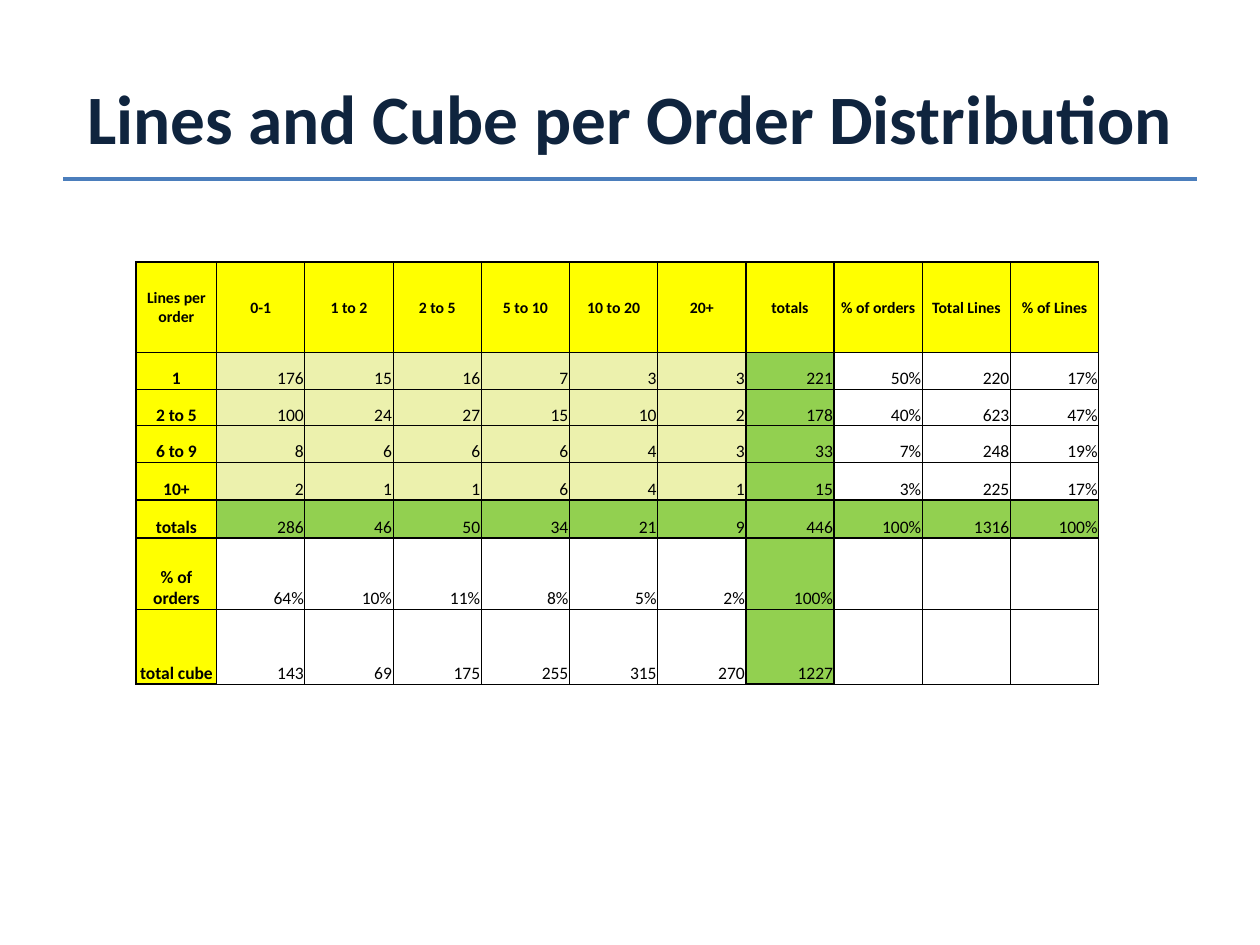
from dataclasses import dataclass

from lxml.etree import SubElement
from pptx import Presentation
from pptx.dml.color import RGBColor as Rgb
from pptx.enum.shapes import MSO_CONNECTOR as Connector
from pptx.enum.text import MSO_ANCHOR as Anchor, MSO_AUTO_SIZE as AutoSize, PP_ALIGN as Align
from pptx.oxml.ns import qn
from pptx.util import Inches, Pt


@dataclass(frozen=True)
class Theme:
    font: str = "Calibri"
    title: str = "0F243E"
    rule: str = "4B7EBC"
    text: str = "000000"
    label: str = "FFFF00"
    counts: str = "ECF1AD"
    totals: str = "92D050"
    title_size: float = 39.6
    header_size: float = 9
    body_size: float = 10
    thin: float = 0.5
    thick: float = 1


theme = Theme()


def write(frame, text, size, color, bold, alignment):
    paragraph = frame.paragraphs[0]
    paragraph.alignment = alignment
    run = paragraph.add_run()
    run.text = text
    for key, value in {"name": theme.font, "size": Pt(size), "bold": bold}.items():
        setattr(run.font, key, value)
    run.font.color.rgb = Rgb.from_string(color)


def draw_border(cell, side, width):
    edge = SubElement(cell._tc.get_or_add_tcPr(), qn(f"a:ln{side}"), w=str(Pt(width)))
    SubElement(SubElement(edge, qn("a:solidFill")), qn("a:srgbClr"), val=theme.text)


deck = Presentation()
deck.slide_width, deck.slide_height = Inches(10), Inches(7.5)
slide = deck.slides.add_slide(deck.slide_layouts[5])

heading = slide.shapes.title
heading_place = {"left": 0.5, "top": 0.3, "width": 9, "height": 1.25}
for key, value in heading_place.items():
    setattr(heading, key, Inches(value))
heading_format = {"auto_size": AutoSize.NONE, "vertical_anchor": Anchor.MIDDLE, "word_wrap": True}
for key, value in heading_format.items():
    setattr(heading.text_frame, key, value)
write(heading.text_frame, "Lines and Cube per Order Distribution",
      theme.title_size, theme.title, True, Align.CENTER)

heading_rule = slide.shapes.add_connector(
    Connector.STRAIGHT, Inches(0.5), Inches(1.42), Inches(9.5), Inches(1.42))
heading_rule.line.color.rgb = Rgb.from_string(theme.rule)
heading_rule.line.width = Pt(2)
SubElement(heading_rule._element.spPr, qn("a:effectLst"))

orders = [
    ["Lines per order", "0-1", "1 to 2", "2 to 5", "5 to 10", "10 to 20", "20+",
     "totals", "% of orders", "Total Lines", "% of Lines"],
    ["1", "176", "15", "16", "7", "3", "3", "221", "50%", "220", "17%"],
    ["2 to 5", "100", "24", "27", "15", "10", "2", "178", "40%", "623", "47%"],
    ["6 to 9", "8", "6", "6", "6", "4", "3", "33", "7%", "248", "19%"],
    ["10+", "2", "1", "1", "6", "4", "1", "15", "3%", "225", "17%"],
    ["totals", "286", "46", "50", "34", "21", "9", "446", "100%", "1316", "100%"],
    ["% of orders", "64%", "10%", "11%", "8%", "5%", "2%", "100%", "", "", ""],
    ["total cube", "143", "69", "175", "255", "315", "270", "1227", "", "", ""],
]
column_widths = [0.64] + [0.7] * 10
row_heights = [0.72, 0.29, 0.29, 0.29, 0.3, 0.3, 0.57, 0.59]
totals_row, totals_column = 5, 7
thick_verticals = {0, 1, totals_column, totals_column + 1}
thick_horizontals = {0, 1, totals_row, totals_row + 1}

distribution = slide.shapes.add_table(
    len(orders), len(orders[0]), Inches(1.08), Inches(2.08),
    Inches(sum(column_widths)), Inches(sum(row_heights))).table
distribution.first_row = distribution.horz_banding = False
for column, width in zip(distribution.columns, column_widths):
    column.width = Inches(width)
for row, height in zip(distribution.rows, row_heights):
    row.height = Inches(height)

for r, values in enumerate(orders):
    for c, value in enumerate(values):
        cell = distribution.cell(r, c)
        is_header = r == 0
        is_label = is_header or c == 0
        cell_format = {
            "margin_left": Inches(0.01), "margin_right": Inches(0.01),
            "margin_top": Inches(0.01), "margin_bottom": 0,
            "vertical_anchor": Anchor.MIDDLE if is_header else Anchor.BOTTOM,
        }
        for key, setting in cell_format.items():
            setattr(cell, key, setting)

        closes_row = c == 10 and r in (0, totals_row)
        closes_column = r == 7 and c in (0, totals_column)
        thick_sides = {
            "L": c in thick_verticals,
            "R": c + 1 in thick_verticals or closes_row,
            "T": r in thick_horizontals,
            "B": r + 1 in thick_horizontals or closes_column,
        }
        for side, is_thick in thick_sides.items():
            draw_border(cell, side, theme.thick if is_thick else theme.thin)

        if is_label:
            color = theme.label
        elif r == totals_row or c == totals_column:
            color = theme.totals
        elif r < totals_row and c < totals_column:
            color = theme.counts
        else:
            color = None
        if color:
            cell.fill.solid()
            cell.fill.fore_color.rgb = Rgb.from_string(color)
        else:
            cell.fill.background()

        if value:
            write(cell.text_frame, value,
                  theme.header_size if is_header else theme.body_size,
                  theme.text, is_label, Align.CENTER if is_label else Align.RIGHT)

deck.save("out.pptx")
